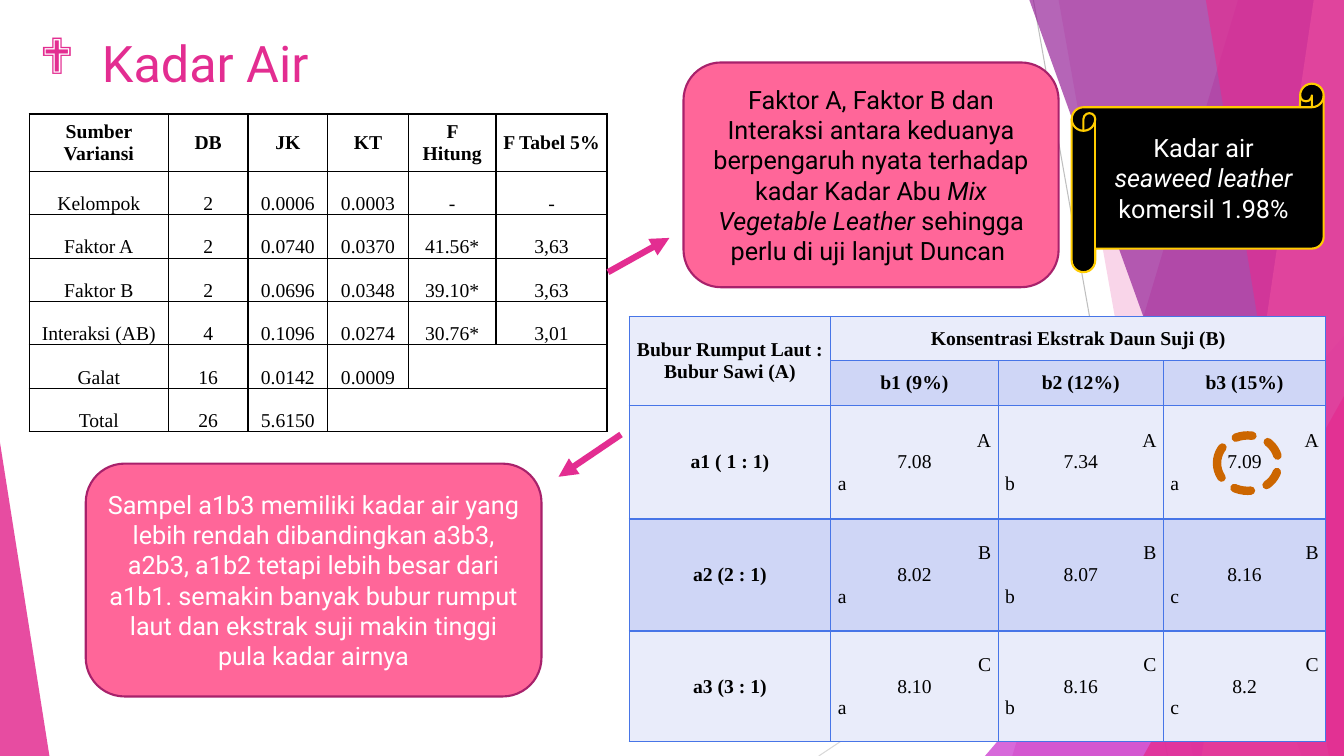
from dataclasses import dataclass
from itertools import product

from lxml import etree
from pptx import Presentation
from pptx import util as u
from pptx.dml.color import RGBColor
from pptx.enum import dml, shapes, text
from pptx.oxml.ns import qn

WIDE, HIGH = u.Inches(13.33), u.Inches(7.5)
FORM, ALIGN = shapes.MSO_SHAPE, text.PP_ALIGN


@dataclass(frozen=True)
class Theme:
    sans: str = "Roboto"
    serif: str = "Times New Roman"
    head: int = 36
    body: int = 18
    cell: int = 14
    pink: str = "E32D91"
    rose: str = "FF6699"
    plum: str = "A8216B"
    violet: str = "C830CC"
    purple: str = "962499"
    blush: str = "EE81BD"
    gold: str = "FFCC00"
    amber: str = "CC6600"
    black: str = "000000"
    white: str = "FFFFFF"
    blue: str = "4775E7"
    pale: str = "E9ECFA"
    deep: str = "CFD6F6"
    gray: str = "BFBFBF"
    mist: str = "D9D9D9"


T = Theme()


def across(share):
    return int(WIDE * share / 100)


def down(share):
    return int(HIGH * share / 100)


def place(box):
    """Turn left, top, width, height in percent of the slide into lengths."""
    return across(box[0]), down(box[1]), across(box[2]), down(box[3])


def rgb(code):
    return RGBColor.from_string(code)


def add(parent, tag, **attrs):
    return etree.SubElement(parent, qn(tag), attrs)


def say(par, words, font=T.sans, size=T.body, color=T.black, bold=False,
        align=ALIGN.CENTER, space=None):
    """Write words into a paragraph; underscores enclose italics."""
    par.alignment = align
    if space:
        par.line_spacing = space
    for n, part in enumerate(words.split("_")):
        if part:
            run = par.add_run()
            run.text = part
            face = run.font
            face.name, face.size, face.bold = font, u.Pt(size), bold
            face.italic = n % 2 == 1
            face.color.rgb = rgb(color)


def paint(shape, fill=None, alpha=100, line=None, width=1.5):
    shape.shadow.inherit = False
    if fill:
        shape.fill.solid()
        shape.fill.fore_color.rgb = rgb(fill)
        if alpha < 100:
            tone = shape.element.spPr.find(qn("a:solidFill"))[0]
            add(tone, "a:alpha", val=str(alpha * 1000))
    else:
        shape.fill.background()
    if line:
        shape.line.color.rgb = rgb(line)
        shape.line.width = u.Pt(width)
    else:
        shape.line.fill.background()


def stroke(slide, start, end, color, width, arrow=False):
    line = slide.shapes.add_connector(
        shapes.MSO_CONNECTOR.STRAIGHT, across(start[0]), down(start[1]),
        across(end[0]), down(end[1]))
    line.line.color.rgb = rgb(color)
    line.line.width = u.Pt(width)
    props = line.element.spPr
    if arrow:
        add(props.find(qn("a:ln")), "a:tailEnd", type="triangle")
    add(props, "a:effectLst")


def band(slide, top, foot, color, alpha):
    """Fill from a slanted left edge to the right side of the slide."""
    maker = slide.shapes.build_freeform(across(top), 0)
    maker.add_line_segments([(WIDE, 0), (WIDE, HIGH), (across(foot), HIGH)])
    paint(maker.convert_to_shape(), color, alpha)


def wedge(slide, box, peak, color, alpha):
    shape = slide.shapes.add_shape(FORM.ISOSCELES_TRIANGLE, *place(box))
    shape.adjustments[0] = peak
    paint(shape, color, alpha)


def backdrop(slide):
    stroke(slide, (76.89, 0), (86.87, 100), T.gray, 0.75)
    stroke(slide, (100, 53.73), (60.92, 100), T.mist, 0.75)
    band(slide, 92.12, 75.32, T.pink, 30)
    band(slide, 78.77, 88.75, T.pink, 20)
    wedge(slide, (73.29, 44.4, 26.71, 55.6), 1, T.violet, 72)
    band(slide, 76.59, 96.85, T.purple, 70)
    band(slide, 97.75, 89.42, T.blush, 70)
    band(slide, 89.72, 98.87, T.pink, 65)
    wedge(slide, (85.07, 52.4, 14.93, 47.6), 1, T.pink, 80)
    wedge(slide, (0, 58.53, 3.68, 41.47), 0, T.pink, 85)


def heading(slide, box, words):
    title = slide.shapes.title
    title.left, title.top, title.width, title.height = place(box)
    frame = title.text_frame
    frame.vertical_anchor = text.MSO_ANCHOR.MIDDLE
    par = frame.paragraphs[0]
    say(par, words, size=T.head, color=T.pink, align=ALIGN.LEFT)
    props = par._p.get_or_add_pPr()
    indent = u.Inches(0.62)
    props.set("marL", str(indent))
    props.set("indent", str(-indent))
    add(props, "a:buFont", typeface="Wingdings")
    add(props, "a:buChar", char="❖")


def grid(slide, box, cols, rows, edge):
    """Add a plain table whose column and row weights share out the box."""
    left, top, width, height = place(box)
    table = slide.shapes.add_table(
        len(rows), len(cols), left, top, width, height).table
    table.first_row = table.horz_banding = False
    for col, part in zip(table.columns, cols):
        col.width = int(width * part / sum(cols))
    for row, part in zip(table.rows, rows):
        row.height = int(height * part / sum(rows))
    for cell in table.iter_cells():
        cell.vertical_anchor = text.MSO_ANCHOR.MIDDLE
        cell.margin_left = cell.margin_right = u.Inches(0.07)
        cell.margin_top = cell.margin_bottom = 0
        props = cell._tc.get_or_add_tcPr()
        for side in "LRTB":
            line = add(props, "a:ln" + side, w=str(u.Pt(1)))
            add(add(line, "a:solidFill"), "a:srgbClr", val=edge)
        cell.fill.background()
    return table


def note(par, words, **form):
    say(par, words, font=T.serif, size=T.cell, **form)


def variance(slide, box):
    data = [
        ("Sumber Variansi", "DB", "JK", "KT", "F Hitung", "F Tabel 5%"),
        ("Kelompok", "2", "0.0006", "0.0003", "-", "-"),
        ("Faktor A", "2", "0.0740", "0.0370", "41.56*", "3,63"),
        ("Faktor B", "2", "0.0696", "0.0348", "39.10*", "3,63"),
        ("Interaksi (AB)", "4", "0.1096", "0.0274", "30.76*", "3,01"),
        ("Galat", "16", "0.0142", "0.0009"),
        ("Total", "26", "5.6150"),
    ]
    table = grid(slide, box, [1.38, 0.79, 0.79, 0.8, 0.87, 1.1],
                 [0.57] + [0.43] * 6, T.black)
    for r, row in enumerate(data):
        for c, words in enumerate(row):
            note(table.cell(r, c).text_frame.paragraphs[0], words,
                 bold=r == 0, space=2 if r else None)
        if len(row) < 6:
            table.cell(r, len(row)).merge(table.cell(r, 5))


def duncan(slide, box):
    data = [
        ("a1 ( 1 : 1)", "A", ("7.08", "a"), ("7.34", "b"), ("7.09", "a")),
        ("a2 (2 : 1)", "B", ("8.02", "a"), ("8.07", "b"), ("8.16", "c")),
        ("a3 (3 : 1)", "C", ("8.10", "a"), ("8.16", "b"), ("8.2", "c")),
    ]
    table = grid(slide, box, [2, 1.66, 1.64, 1.61],
                 [0.44, 0.44, 1.13, 1.11, 1.1], T.blue)
    for r, c in product(range(5), range(4)):
        fill = table.cell(r, c).fill
        fill.solid()
        fill.fore_color.rgb = rgb(T.deep if r % 2 else T.pale)
    table.cell(0, 0).merge(table.cell(1, 0))
    table.cell(0, 1).merge(table.cell(0, 3))
    heads = {(0, 0): "Bubur Rumput Laut : Bubur Sawi (A)",
             (0, 1): "Konsentrasi Ekstrak Daun Suji (B)",
             (1, 1): "b1 (9%)", (1, 2): "b2 (12%)", (1, 3): "b3 (15%)"}
    for r, (name, rank, *pairs) in enumerate(data, 2):
        heads[r, 0] = name
        for c, (value, mark) in enumerate(pairs, 1):
            frame = table.cell(r, c).text_frame
            note(frame.paragraphs[0], rank, align=ALIGN.RIGHT)
            note(frame.add_paragraph(), value)
            note(frame.add_paragraph(), mark, align=ALIGN.LEFT)
    for spot, words in heads.items():
        note(table.cell(*spot).text_frame.paragraphs[0], words, bold=True)


def callout(slide, box, words, form=FORM.ROUNDED_RECTANGLE, fill=T.rose,
            line=T.plum, color=T.white):
    shape = slide.shapes.add_shape(form, *place(box))
    paint(shape, fill, line=line)
    frame = shape.text_frame
    frame.word_wrap = True
    frame.vertical_anchor = text.MSO_ANCHOR.MIDDLE
    say(frame.paragraphs[0], words, color=color)


def ring(slide, box):
    shape = slide.shapes.add_shape(FORM.OVAL, *place(box))
    paint(shape, line=T.amber, width=6)
    shape.line.dash_style = dml.MSO_LINE.SQUARE_DOT
    shape.element.spPr.find(qn("a:ln")).set("cap", "rnd")


def main():
    deck = Presentation()
    deck.slide_width, deck.slide_height = WIDE, HIGH
    slide = deck.slides.add_slide(deck.slide_layouts.get_by_name("Title Only"))
    backdrop(slide)
    heading(slide, (2.18, 3.07, 70.52, 10.4), "Kadar Air")
    variance(slide, (2.18, 15.07, 42.99, 42))
    duncan(slide, (46.81, 41.87, 51.84, 56.27))
    stroke(slide, (45.24, 36), (49.81, 31.47), T.pink, 4.5, arrow=True)
    callout(slide, (50.86, 8.27, 27.91, 29.73),
            "Faktor A, Faktor B dan Interaksi antara keduanya berpengaruh "
            "nyata terhadap kadar Kadar Abu _Mix Vegetable Leather _"
            "sehingga perlu di uji lanjut Duncan ", color=T.black)
    stroke(slide, (46.21, 57.47), (41.56, 63.07), T.pink, 4.5, arrow=True)
    callout(slide, (6.38, 61.33, 33.91, 30.8),
            "Sampel a1b3 memiliki kadar air yang lebih rendah dibandingkan "
            "a3b3, a2b3, a1b2 tetapi lebih besar dari a1b1. semakin banyak "
            "bubur rumput laut dan ekstrak suji makin tinggi pula kadar airnya")
    callout(slide, (79.74, 11.07, 18.75, 24.93),
            "Kadar air _seaweed leather _komersil 1.98%",
            form=FORM.HORIZONTAL_SCROLL, fill=T.black, line=T.gold)
    ring(slide, (90.55, 57.6, 4.58, 7.33))
    deck.save("out.pptx")


if __name__ == "__main__":
    main()
